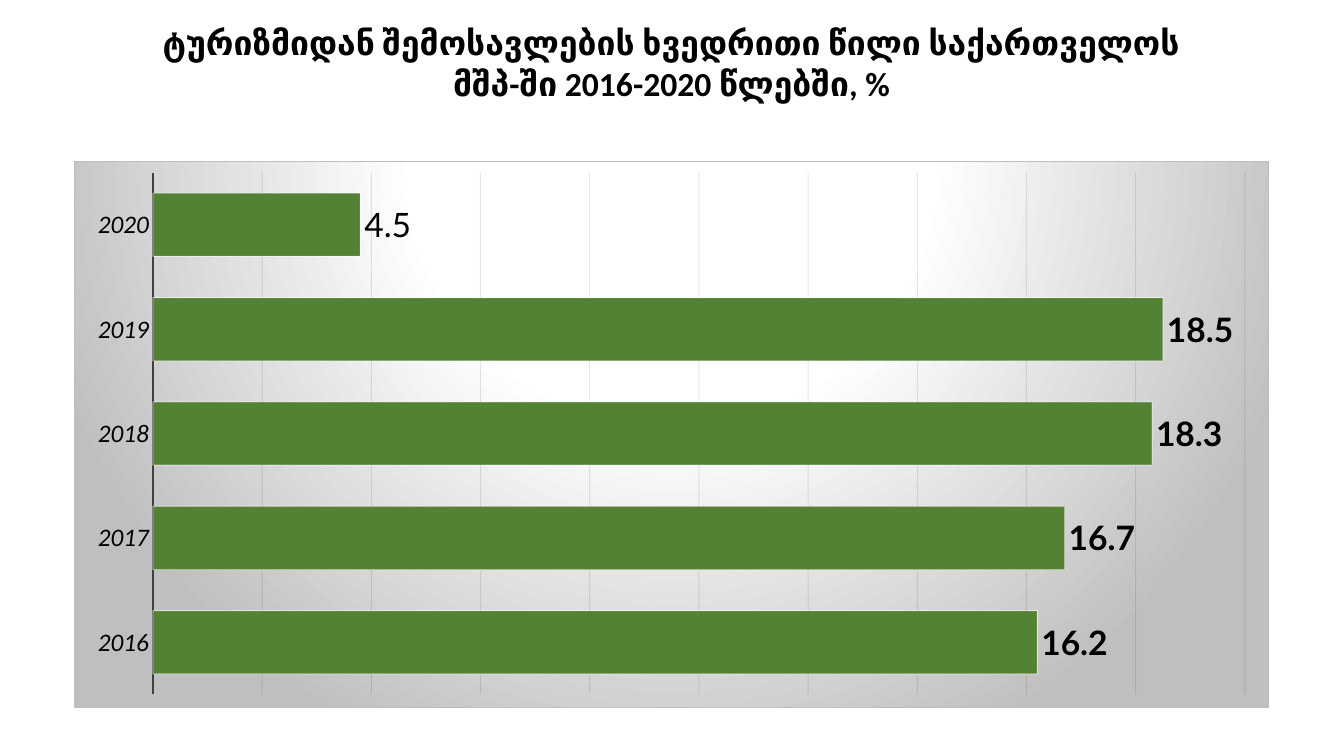
from lxml import etree
from pptx import Presentation
from pptx import util as u
from pptx.chart.data import CategoryChartData
from pptx.dml.color import RGBColor
from pptx.enum import chart as ch, text
from pptx.oxml import parse_xml
from pptx.oxml.ns import nsdecls, qn

BLACK = RGBColor(0x00, 0x00, 0x00)
WHITE = RGBColor(0xFF, 0xFF, 0xFF)
GREEN = RGBColor(0x54, 0x82, 0x35)
AXIS_GREY = RGBColor(0x40, 0x40, 0x40)
GRID_GREY = RGBColor(0x0D, 0x0D, 0x0D)

TITLE = "ტურიზმიდან შემოსავლების ხვედრითი წილი საქართველოს\nმშპ-ში 2016-2020 წლებში, %"
SHARES = {"2016": 16.2, "2017": 16.7, "2018": 18.3, "2019": 18.5, "2020": 3.8}
LABEL_2020 = "4.5"

CHART_BACKGROUND = f"""<c:spPr {nsdecls('c', 'a')}>
  <a:gradFill><a:gsLst>
    <a:gs pos="0"><a:srgbClr val="FFFFFF"/></a:gs>
    <a:gs pos="39000"><a:srgbClr val="FFFFFF"/></a:gs>
    <a:gs pos="100000"><a:srgbClr val="BFBFBF"/></a:gs>
  </a:gsLst><a:path path="circle">
    <a:fillToRect l="50000" t="-80000" r="50000" b="180000"/>
  </a:path></a:gradFill>
  <a:ln w="9525"><a:solidFill><a:srgbClr val="BFBFBF"/></a:solidFill></a:ln>
</c:spPr>"""

PLOT_LAYOUT = f"""<c:layout {nsdecls('c')}><c:manualLayout>
  <c:layoutTarget val="inner"/><c:xMode val="edge"/><c:yMode val="edge"/>
  <c:x val="0.066"/><c:y val="0.02"/><c:w val="0.914"/><c:h val="0.957"/>
</c:manualLayout></c:layout>"""


def style_font(font, size, name="Calibri", bold=False, italic=False):
    font.size, font.name = u.Pt(size), name
    font.bold, font.italic = bold, italic
    font.color.rgb = BLACK


def style_line(line, color, width, opacity=100):
    line.color.rgb = color
    line.width = u.Pt(width)
    if opacity < 100:
        color_element = line.fill._xPr.find(".//" + qn("a:srgbClr"))
        etree.SubElement(color_element, qn("a:alpha"), val=str(opacity * 1000))


def add_title(slide, left, top, width, height):
    title = slide.shapes.title
    title.left, title.top, title.width, title.height = left, top, width, height
    frame = title.text_frame
    frame.text = TITLE
    frame.word_wrap = True
    frame.auto_size = text.MSO_AUTO_SIZE.NONE
    frame.vertical_anchor = text.MSO_ANCHOR.TOP
    for paragraph in frame.paragraphs:
        paragraph.alignment = text.PP_ALIGN.CENTER
        for run in paragraph.runs:
            style_font(run.font, 24, bold=True)


def style_axes(chart):
    years = chart.category_axis
    years.major_tick_mark = ch.XL_TICK_MARK.NONE
    style_font(years.tick_labels.font, 18, italic=True)
    style_line(years.format.line, AXIS_GREY, 1.5)

    shares = chart.value_axis
    shares.visible = False
    shares.minimum_scale, shares.maximum_scale, shares.major_unit = 0, 20, 2
    shares.has_major_gridlines = True
    style_line(shares.major_gridlines.format.line, GRID_GREY, 0.75, opacity=10)


def style_bars(plot):
    plot.gap_width = 65
    plot.vary_by_categories = False
    series = plot.series[0]
    series.format.fill.solid()
    series.format.fill.fore_color.rgb = GREEN
    style_line(series.format.line, WHITE, 0.75, opacity=50)

    labels = series.data_labels
    labels.show_value = True
    labels.number_format, labels.number_format_is_linked = "0.0", False
    labels.position = ch.XL_LABEL_POSITION.OUTSIDE_END
    style_font(labels.font, 24, "Lato", bold=True)

    label = series.points[len(SHARES) - 1].data_label
    label.text_frame.text = LABEL_2020
    label.position = ch.XL_LABEL_POSITION.OUTSIDE_END
    style_font(label.text_frame.paragraphs[0].runs[0].font, 24, "Lato")


def add_share_chart(slide, left, top, width, height):
    data = CategoryChartData()
    data.categories = list(SHARES)
    data.add_series("Series 1", list(SHARES.values()))
    chart = slide.shapes.add_chart(
        ch.XL_CHART_TYPE.BAR_CLUSTERED, left, top, width, height, data).chart
    chart.has_title = chart.has_legend = False
    style_font(chart.font, 10)
    style_axes(chart)
    style_bars(chart.plots[0])

    chart_space = chart.element
    chart_space.find(qn("c:txPr")).addprevious(parse_xml(CHART_BACKGROUND))
    plot_area = chart_space.find(".//" + qn("c:plotArea"))
    for layout in plot_area.findall(qn("c:layout")):
        plot_area.remove(layout)
    plot_area.insert(0, parse_xml(PLOT_LAYOUT))


def main():
    presentation = Presentation()
    presentation.slide_width = u.Inches(13.33)
    presentation.slide_height = u.Inches(7.5)
    slide = presentation.slides.add_slide(presentation.slide_layouts[5])
    add_title(slide, *map(u.Inches, (0.47, 0.17, 12.38, 0.91)))
    add_share_chart(slide, *map(u.Inches, (0.73, 1.6, 11.86, 5.42)))
    presentation.save("out.pptx")


if __name__ == "__main__":
    main()
